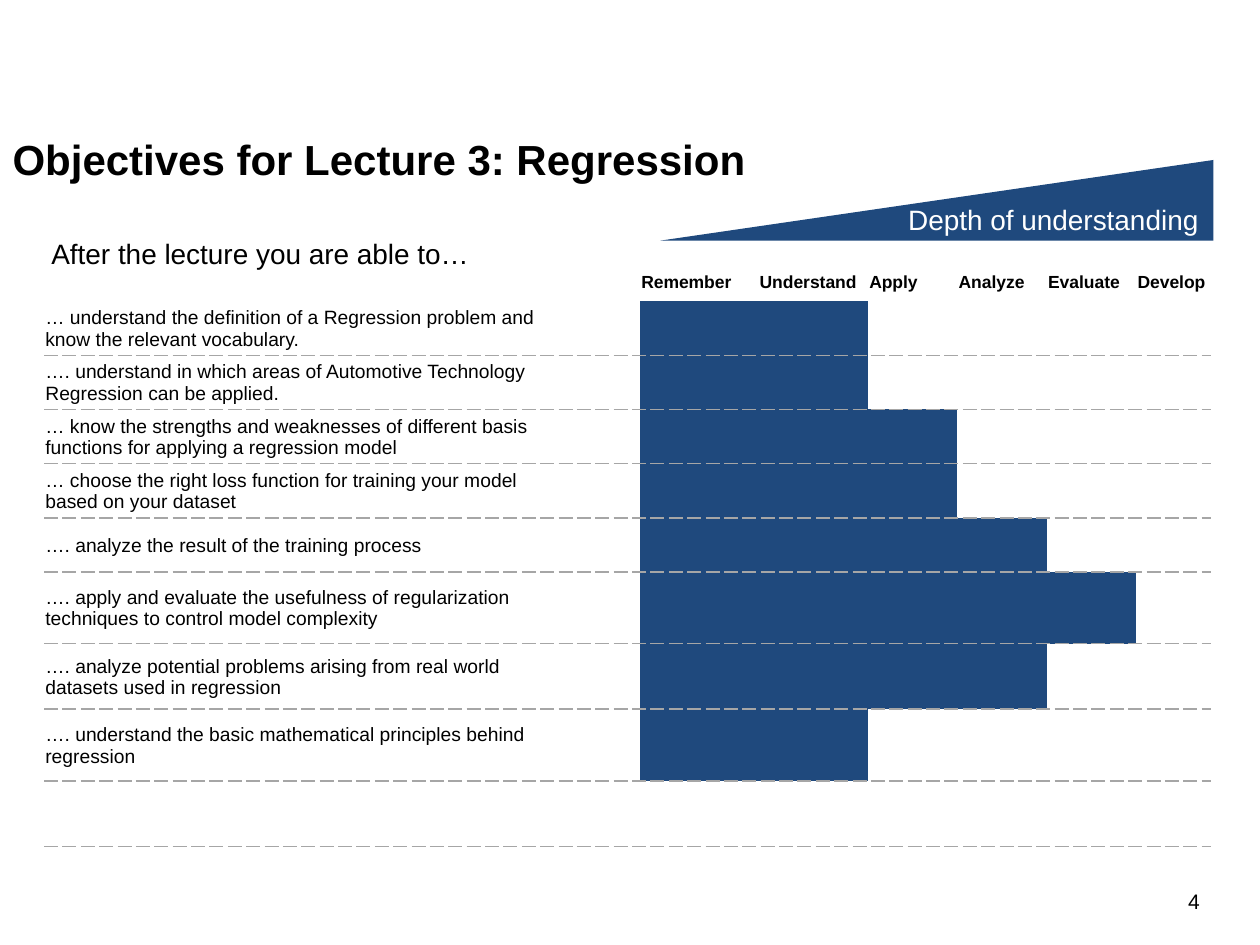
import lxml.etree
import pptx
import pptx.dml.color
import pptx.enum.shapes
import pptx.enum.text
import pptx.oxml.ns
import pptx.util

Inches = pptx.util.Inches
Anchor = pptx.enum.text.MSO_ANCHOR
NAVY, WHITE, BLACK, GRAY = "1F497D", "FFFFFF", "000000", "A6A6A6"

LEVELS = ["Remember", "Understand", "Apply", "Analyze", "Evaluate", "Develop"]
# Objective, number of levels reached, row height in inches
OBJECTIVES = [
    ("… understand the definition of a Regression problem and know the relevant vocabulary.", 2, 0.43),
    ("…. understand in which areas of Automotive Technology Regression can be applied.", 2, 0.43),
    ("… know the strengths and weaknesses of different basis functions for applying a regression model", 3, 0.43),
    ("… choose the right loss function for training your model based on your dataset", 3, 0.43),
    ("…. analyze the result of the training process", 4, 0.43),
    ("…. apply and evaluate the usefulness of regularization techniques to control model complexity", 5, 0.57),
    ("…. analyze potential problems arising from real world datasets used in regression", 4, 0.52),
    ("…. understand the basic mathematical principles behind regression", 2, 0.57),
    ("", 0, 0.52),
]
HEADER_HEIGHT = 0.31
COLUMN_WIDTHS = [4.02, 0.71, 0.94, 0.87, 0.71, 0.71, 0.71, 0.59]
FIRST_LEVEL_COLUMN = 2


def color(value):
    return pptx.dml.color.RGBColor.from_string(value)


def write(frame, text, size, ink=BLACK, bold=False):
    para = frame.paragraphs[0]
    para.text = text
    para.font.name = "Arial"
    para.font.size = pptx.util.Pt(size)
    para.font.bold = bold
    para.font.color.rgb = color(ink)
    return para


def add_label(page, box, text, size, ink=BLACK, wrap=True):
    frame = page.shapes.add_textbox(*map(Inches, box)).text_frame
    frame.word_wrap = wrap
    return write(frame, text, size, ink)


def add_title(page, box, text):
    title = page.shapes.title
    title.left, title.top, title.width, title.height = map(Inches, box)
    frame = title.text_frame
    frame.vertical_anchor = Anchor.TOP
    frame.margin_top = Inches(0.08)
    para = write(frame, text, 24, bold=True)
    para.alignment = pptx.enum.text.PP_ALIGN.LEFT


def set_borders(cell, dashed_sides):
    """Dash the given sides (of L, R, T, B) and clear the others."""
    properties = cell._tc.get_or_add_tcPr()
    for index, side in enumerate("LRTB"):
        line = lxml.etree.Element(pptx.oxml.ns.qn(f"a:ln{side}"), w=str(pptx.util.Pt(1)))
        if side in dashed_sides:
            fill = lxml.etree.SubElement(line, pptx.oxml.ns.qn("a:solidFill"))
            lxml.etree.SubElement(fill, pptx.oxml.ns.qn("a:srgbClr"), val=GRAY)
            lxml.etree.SubElement(line, pptx.oxml.ns.qn("a:prstDash"), val="sysDash")
        else:
            lxml.etree.SubElement(line, pptx.oxml.ns.qn("a:noFill"))
        properties.insert(index, line)


def format_cell(cell, text, size, bold, fill, dashed_sides):
    cell.margin_left = cell.margin_top = cell.margin_right = Inches(0.01)
    cell.margin_bottom = 0
    cell.vertical_anchor = Anchor.MIDDLE
    write(cell.text_frame, text, size, bold=bold)
    if fill:
        cell.fill.solid()
        cell.fill.fore_color.rgb = color(fill)
    else:
        cell.fill.background()
    set_borders(cell, dashed_sides)


def add_objectives_table(page, box):
    heights = [HEADER_HEIGHT] + [height for _, _, height in OBJECTIVES]
    table = page.shapes.add_table(len(heights), len(COLUMN_WIDTHS), *map(Inches, box)).table
    table.first_row = table.horz_banding = False
    for row, height in zip(table.rows, heights):
        row.height = Inches(height)
    for column, width in zip(table.columns, COLUMN_WIDTHS):
        column.width = Inches(width)

    for column, text in enumerate([""] * FIRST_LEVEL_COLUMN + LEVELS):
        format_cell(table.cell(0, column), text, 10, True, None, "")
    for row, (objective, depth, _) in enumerate(OBJECTIVES, start=1):
        for column in range(len(COLUMN_WIDTHS)):
            level = column - FIRST_LEVEL_COLUMN
            fill = None if level < 0 else NAVY if level < depth else WHITE
            text = objective if column == 0 else ""
            format_cell(table.cell(row, column), text, 11, False, fill, "B" if row == 1 else "TB")


def add_depth_wedge(page, box):
    left, top, width, height = box
    wedge = page.shapes.add_shape(
        pptx.enum.shapes.MSO_SHAPE.RIGHT_TRIANGLE, *map(Inches, box))
    wedge.shadow.inherit = False
    wedge.fill.solid()
    wedge.fill.fore_color.rgb = color(NAVY)
    wedge.line.fill.background()
    wedge._element.spPr.xfrm.set("flipH", "1")
    label_box = (left + width - 2.52, top + 0.29, 2.53, 0.37)
    add_label(page, label_box, "Depth of understanding", 16, WHITE, wrap=False)


def add_page_number(page, box, number):
    para = add_label(page, box, number, 12)
    para.alignment = pptx.enum.text.PP_ALIGN.RIGHT


def main():
    deck = pptx.Presentation()
    deck.slide_width, deck.slide_height = Inches(10), Inches(7.5)
    page = deck.slides.add_slide(deck.slide_layouts[5])
    add_title(page, (0, 0.98, 8.82, 0.67), "Objectives for Lecture 3: Regression")
    add_objectives_table(page, (0.35, 2.08, 9.25, 4.64))
    add_depth_wedge(page, (5.24, 1.27, 4.39, 0.64))
    add_label(page, (0.31, 1.83, 5, 0.37), "After the lecture you are able to…", 16)
    add_page_number(page, (8.46, 7, 1.16, 0.33), "4")
    deck.save("out.pptx")


if __name__ == "__main__":
    main()
